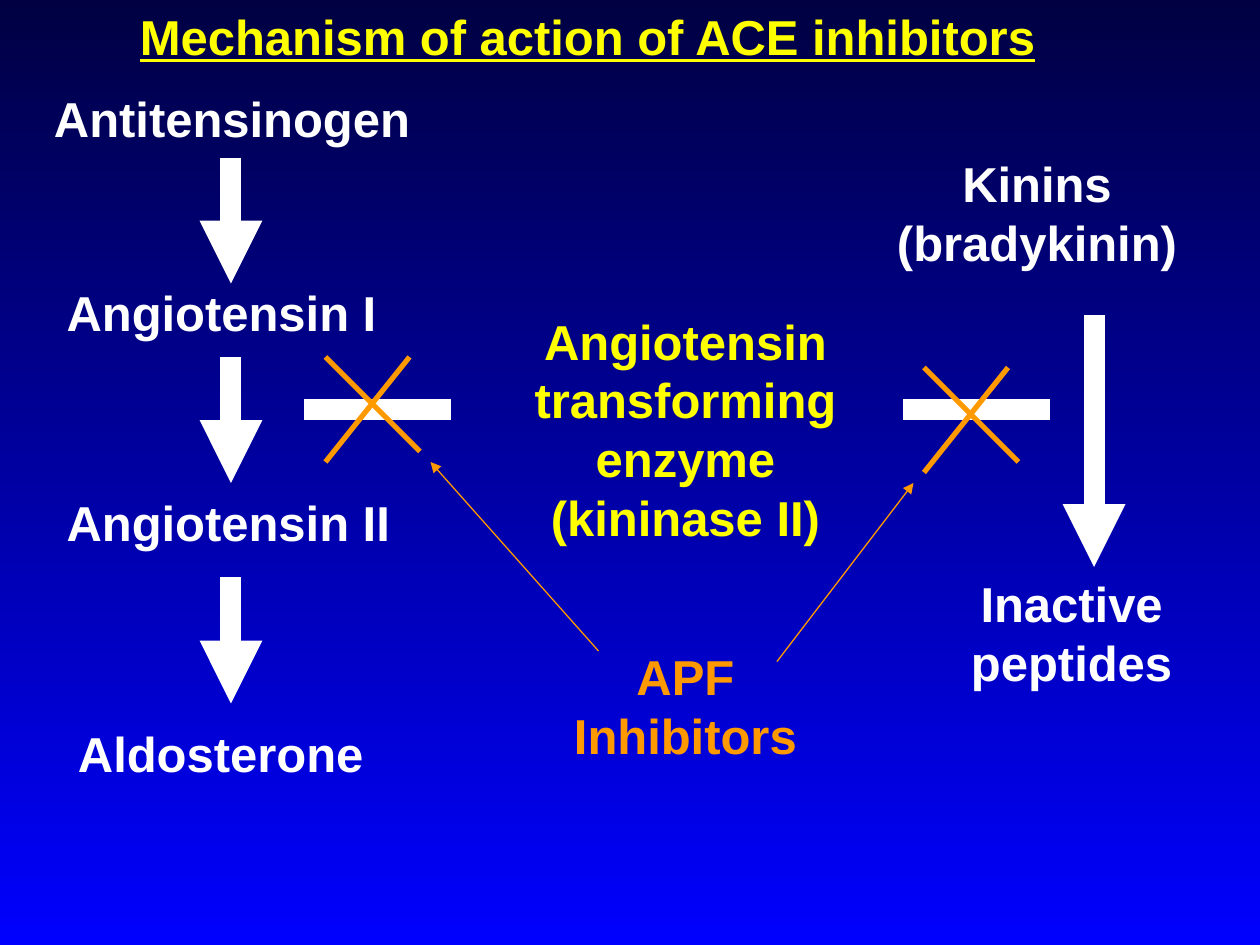
import pptx
import pptx.util
import pptx.dml.color
import pptx.enum.shapes
import pptx.enum.text
import pptx.oxml.ns
from dataclasses import dataclass
from lxml import etree


@dataclass(frozen=True)
class Theme:
    font: str = "Arial"
    size: int = 28
    white: str = "FFFFFF"
    yellow: str = "FFFF00"
    orange: str = "FF9900"
    bg_top: str = "000043"
    bg_bottom: str = "0000FF"
    thick: float = 12
    cross: float = 3
    thin: float = 0.75


T = Theme()
ALIGN = pptx.enum.text.PP_ALIGN
WIDTH, HEIGHT = 10, 7.5
COLS = 120  # grid columns across the slide; rows have the same pitch
CELL = WIDTH / COLS

# Content: lines, box in inches (left, top, width, height), colour, alignment
TITLE = (["Mechanism of action of ACE inhibitors"], (1.01, 0, 7.76, 0.57), T.yellow, ALIGN.LEFT)
LABELS = [
    (["Antitensinogen"], (0.33, 0.65, 3.28, 0.57), T.white, ALIGN.LEFT),
    (["Angiotensin I"], (0.43, 2.19, 2.88, 0.57), T.white, ALIGN.LEFT),
    (["Angiotensin II"], (0.43, 3.86, 2.99, 0.57), T.white, ALIGN.LEFT),
    (["Aldosterone"], (0.52, 5.69, 2.79, 0.57), T.white, ALIGN.LEFT),
    (["Kinins", "(bradykinin)"], (6.84, 1.17, 2.78, 1.04), T.white, ALIGN.CENTER),
    (["Inactive", "peptides"], (7.17, 4.5, 2.67, 1.52), T.white, ALIGN.CENTER),
    (["Angiotensin", "transforming", "enzyme", "(kininase II)"],
     (3.75, 2.42, 3.38, 1.99), T.yellow, ALIGN.CENTER),
    (["APF", "Inhibitors"], (4.09, 5.08, 2.7, 1.04), T.orange, ALIGN.CENTER),
]

# Lines in grid cells
PATHWAY_ARROWS = [(22, 15, 12), (22, 34, 12), (22, 55, 12), (104.2, 30, 24)]  # column, row, length
ENZYME_BARS = [(86, 39, 14), (29, 39, 14)]  # column, row, length
CROSSES = [(31, 34), (88, 35)]  # top left corner
INHIBITOR_ARROWS = [(74, 63, 87, 46), (57, 62, 41, 44)]  # from, to


def rgb(color):
    return pptx.dml.color.RGBColor.from_string(color)


def write(shape, lines, box, color, align, underline=None):
    shape.left, shape.top, shape.width, shape.height = map(pptx.util.Inches, box)
    tf = shape.text_frame
    tf.word_wrap = True
    tf.auto_size = pptx.enum.text.MSO_AUTO_SIZE.NONE
    tf.vertical_anchor = pptx.enum.text.MSO_ANCHOR.TOP
    for i, line in enumerate(lines):
        p = tf.add_paragraph() if i else tf.paragraphs[0]
        p.alignment = align
        p.line_spacing = 1.0
        p.space_before = pptx.util.Pt(0)
        r = p.add_run()
        r.text = line
        r.font.name, r.font.size = T.font, pptx.util.Pt(T.size)
        r.font.bold, r.font.underline = True, underline
        r.font.color.rgb = rgb(color)


def draw_line(s, ends, color, width, arrow=False):
    c = s.shapes.add_connector(pptx.enum.shapes.MSO_CONNECTOR.STRAIGHT,
                               *(pptx.util.Inches(v * CELL) for v in ends))
    c.line.color.rgb = rgb(color)
    c.line.width = pptx.util.Pt(width)
    if arrow:
        ln = c.line._get_or_add_ln()
        etree.SubElement(ln, pptx.oxml.ns.qn("a:tailEnd"), type="triangle")
    etree.SubElement(c._element.spPr, pptx.oxml.ns.qn("a:effectLst"))


def main():
    prs = pptx.Presentation()
    prs.slide_width, prs.slide_height = pptx.util.Inches(WIDTH), pptx.util.Inches(HEIGHT)
    s = prs.slides.add_slide(prs.slide_layouts[5])

    # Background, dark at the top
    fill = s.background.fill
    fill.gradient()
    fill.gradient_angle = 270
    for stop, color, position in zip(fill.gradient_stops, (T.bg_top, T.bg_bottom), (0, 1)):
        stop.color.rgb = rgb(color)
        stop.position = position

    # Title and labels
    write(s.shapes.title, *TITLE, underline=True)
    for lines, box, color, align in LABELS:
        write(s.shapes.add_textbox(0, 0, 0, 0), lines, box, color, align)

    # Pathways and the enzyme's action on them
    for x, y, length in PATHWAY_ARROWS:
        draw_line(s, (x, y, x, y + length), T.white, T.thick, arrow=True)
    for x, y, length in ENZYME_BARS:
        draw_line(s, (x, y, x + length, y), T.white, T.thick)

    # Blocking by the inhibitors
    for x, y in CROSSES:
        draw_line(s, (x, y, x + 9, y + 9), T.orange, T.cross)
        draw_line(s, (x + 8, y, x, y + 10), T.orange, T.cross)
    for ends in INHIBITOR_ARROWS:
        draw_line(s, ends, T.orange, T.thin, arrow=True)

    prs.save("out.pptx")


if __name__ == "__main__":
    main()
